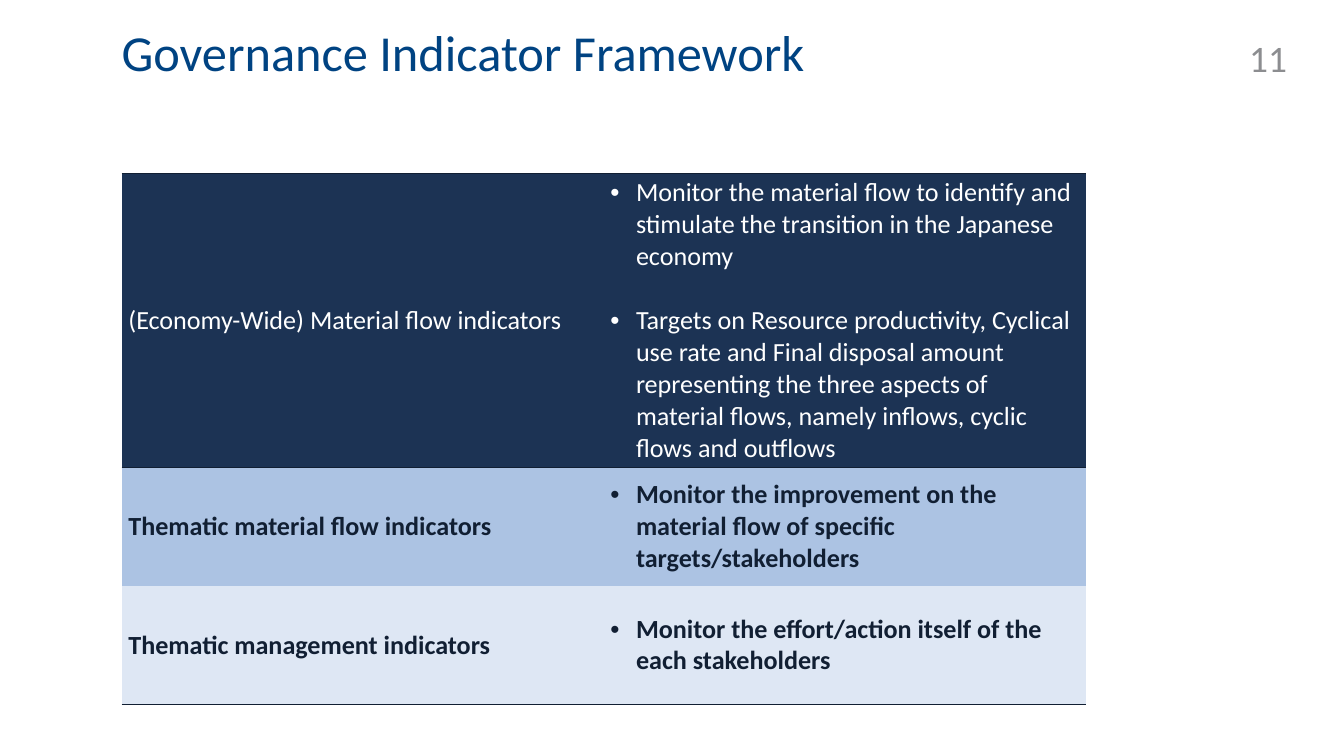
from lxml import etree
from pptx import Presentation
from pptx.dml.color import RGBColor
from pptx.enum.text import MSO_ANCHOR, MSO_AUTO_SIZE, PP_ALIGN
from pptx.oxml.ns import qn
from pptx.util import Emu, Pt

TOP, MIDDLE = MSO_ANCHOR.TOP, MSO_ANCHOR.MIDDLE
LEFT, RIGHT = PP_ALIGN.LEFT, PP_ALIGN.RIGHT
NO_AUTOFIT = MSO_AUTO_SIZE.NONE

FONT = "Calibri"
BLUE = RGBColor(0x00, 0x43, 0x82)
GREY = RGBColor(0x8C, 0x8D, 0x90)
WHITE = RGBColor(0xFF, 0xFF, 0xFF)
INK = RGBColor(0x11, 0x1F, 0x33)
NAVY = RGBColor(0x1C, 0x33, 0x54)
MID_BLUE = RGBColor(0xAC, 0xC3, 0xE3)
PALE_BLUE = RGBColor(0xDE, 0xE7, 0xF4)

TITLE = "Governance Indicator Framework"
PAGE_NUMBER = "11"
# indicator, purposes, height, fill, text colour, bold, ruled sides
ROWS = [
    ("(Economy-Wide) Material flow indicators",
     ["Monitor the material flow to identify and stimulate the transition in the "
      "Japanese economy",
      "Targets on Resource productivity, Cyclical use rate and Final disposal amount "
      "representing the three aspects of material flows, namely inflows, cyclic flows "
      "and outflows"],
     438, NAVY, WHITE, False, "TB"),
    ("Thematic material flow indicators",
     ["Monitor the improvement on the material flow of specific targets/stakeholders"],
     176, MID_BLUE, INK, True, "T"),
    ("Thematic management indicators",
     ["Monitor the effort/action itself of the each stakeholders"],
     176, PALE_BLUE, INK, True, "B"),
]

SLIDE_SIZE = (2000, 1125)
TITLE_BOX = (181, 49, 1435, 149)
NUMBER_BOX = (1821, 55, 104, 60)
TABLE_LEFT, TABLE_TOP, TABLE_WIDTH = 181, 258, 1435
BULLET_INDENT = 38
PURPOSE_GAP = Pt(34)


def px(length):
    return Emu(length * 9144)


def set_font(para, size, color, bold=False):
    font = para.font
    font.name, font.size, font.bold = FONT, Pt(size), bold
    font.color.rgb = color


def add_bullet(para):
    properties = para._p.get_or_add_pPr()
    properties.set("marL", str(px(BULLET_INDENT)))
    properties.set("indent", str(-px(BULLET_INDENT)))
    etree.SubElement(properties, qn("a:buFont"), typeface="Arial")
    etree.SubElement(properties, qn("a:buChar"), char="•")


def set_borders(cell, ruled_sides):
    """Rule the given sides of a cell and clear its other sides."""
    properties = cell._tc.get_or_add_tcPr()
    for position, side in enumerate("LRTB"):
        line = etree.Element(qn(f"a:ln{side}"), w=str(Pt(1)))
        if side in ruled_sides:
            fill = etree.SubElement(line, qn("a:solidFill"))
            etree.SubElement(fill, qn("a:srgbClr"), val=str(INK))
        else:
            etree.SubElement(line, qn("a:noFill"))
        properties.insert(position, line)


def fill_cell(cell, texts, bulleted, fill, color, bold, ruled_sides):
    cell.vertical_anchor = MIDDLE
    cell.margin_left = cell.margin_right = px(10)
    cell.margin_top = cell.margin_bottom = px(5)
    cell.fill.solid()
    cell.fill.fore_color.rgb = fill
    set_borders(cell, ruled_sides)
    frame = cell.text_frame
    for index, text in enumerate(texts):
        para = frame.add_paragraph() if index else frame.paragraphs[0]
        para.text = text
        if index:
            para.space_before = PURPOSE_GAP
        if bulleted:
            add_bullet(para)
        set_font(para, 28, color, bold)


def add_title(slide):
    title = slide.shapes.title
    title.left, title.top, title.width, title.height = map(px, TITLE_BOX)
    frame = title.text_frame
    frame.margin_left = frame.margin_right = frame.margin_top = frame.margin_bottom = 0
    frame.vertical_anchor, frame.auto_size, frame.word_wrap = TOP, NO_AUTOFIT, True
    para = frame.paragraphs[0]
    para.text, para.alignment, para.line_spacing = TITLE, LEFT, 0.8
    set_font(para, 54, BLUE)


def add_page_number(slide):
    frame = slide.shapes.add_textbox(*map(px, NUMBER_BOX)).text_frame
    frame.vertical_anchor, frame.word_wrap = MIDDLE, True
    para = frame.paragraphs[0]
    para.text, para.alignment = PAGE_NUMBER, RIGHT
    set_font(para, 40, GREY)


def add_indicator_table(slide):
    table_height = sum(row[2] for row in ROWS)
    table = slide.shapes.add_table(
        len(ROWS), 2, px(TABLE_LEFT), px(TABLE_TOP), px(TABLE_WIDTH), px(table_height)
    ).table
    for row, (indicator, purposes, height, *style) in zip(table.rows, ROWS):
        row.height = px(height)
        fill_cell(row.cells[0], [indicator], False, *style)
        fill_cell(row.cells[1], purposes, True, *style)


def main():
    deck = Presentation()
    deck.slide_width, deck.slide_height = map(px, SLIDE_SIZE)
    slide = deck.slides.add_slide(deck.slide_layouts.get_by_name("Title Only"))
    add_title(slide)
    add_page_number(slide)
    add_indicator_table(slide)
    deck.save("out.pptx")


if __name__ == "__main__":
    main()
